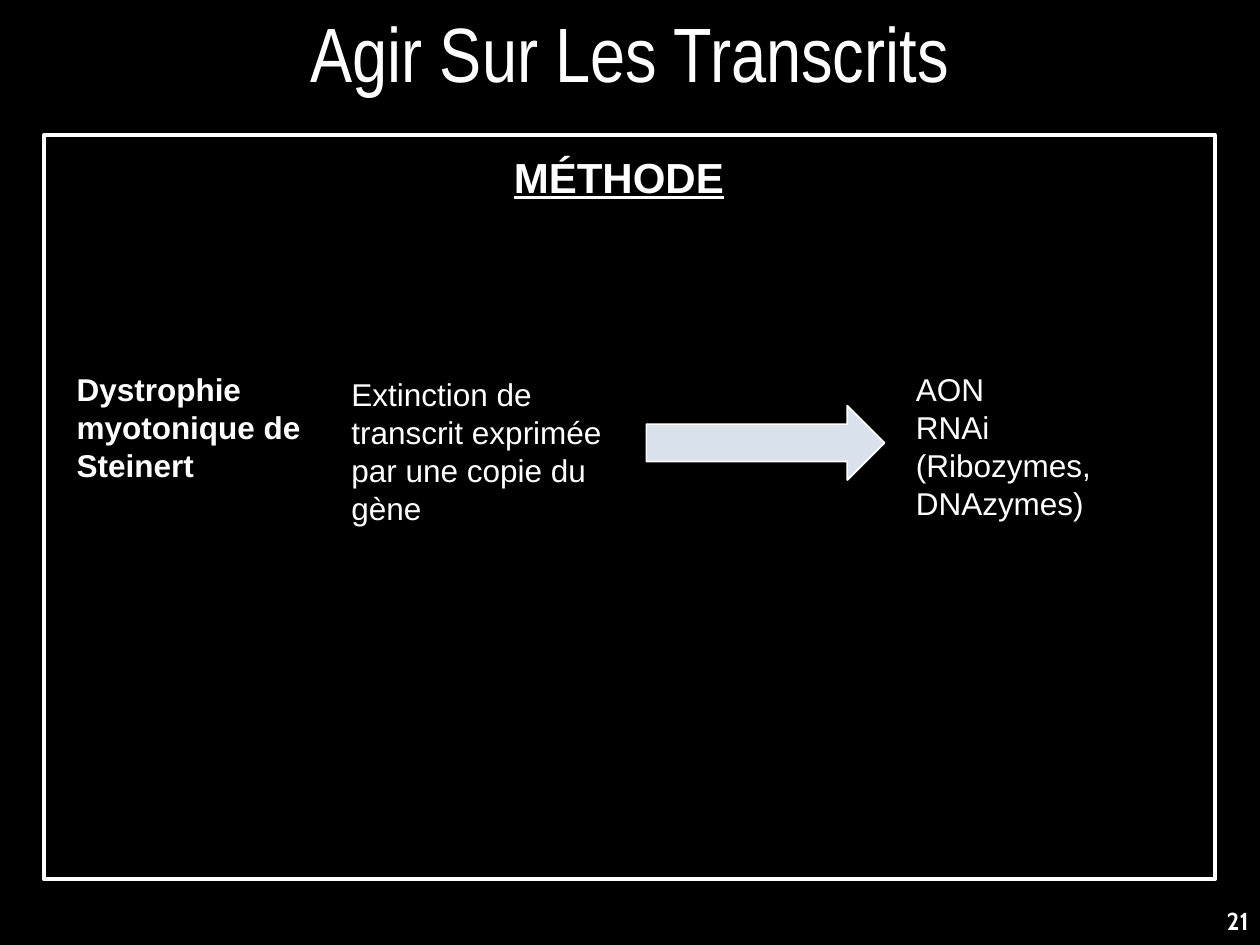
from dataclasses import dataclass

from pptx import Presentation
from pptx.dml.color import RGBColor
from pptx.enum.shapes import MSO_SHAPE as Preset
from pptx.enum.text import MSO_ANCHOR as Anchor, MSO_AUTO_SIZE as AutoSize, PP_ALIGN as Align
from pptx.util import Inches, Pt

WIDTH, HEIGHT = Inches(10), Inches(7.5)
WHITE, BLACK, PALE_BLUE = "FFFFFF", "000000", "D8E1EC"


@dataclass(frozen=True)
class Area:
    """Position and size in percent of the slide."""
    left: float
    top: float
    width: float
    height: float

    def lengths(self) -> tuple[int, int, int, int]:
        """Return the area as slide lengths."""
        return (int(WIDTH * self.left / 100), int(HEIGHT * self.top / 100),
                int(WIDTH * self.width / 100), int(HEIGHT * self.height / 100))


@dataclass(frozen=True)
class Label:
    """Text of one or more paragraphs sharing a style."""
    area: Area
    paragraphs: tuple[str, ...]
    size: int = 18
    font: str = "Arial"
    bold: bool = False
    underline: bool = False
    align: Align = Align.LEFT
    anchor: Anchor = Anchor.TOP


@dataclass(frozen=True)
class Outline:
    """Preset shape with a white line and an optional fill."""
    area: Area
    preset: Preset
    line_width: float
    fill: str | None = None


TITLE = Label(Area(0, -1.2, 100, 13.33), ("Agir Sur Les Transcrits",), 44, "Arial Narrow",
              align=Align.CENTER, anchor=Anchor.MIDDLE)
LABELS = (
    Label(Area(76.8, 95.2, 23.3, 6.93), ("21",), 14, "Cabin", bold=True, align=Align.RIGHT),
    Label(Area(39.8, 15.33, 26, 6.67), ("MÉTHODE",), 24, bold=True, underline=True),
    Label(Area(5.1, 38.53, 21.2, 13.33), ("Dystrophie myotonique de Steinert",), bold=True),
    Label(Area(26.9, 39.07, 22.8, 17.33),
          ("Extinction de transcrit exprimée par une copie du gène",)),
    Label(Area(71.7, 38.53, 16.5, 17.33), ("AON", "RNAi (Ribozymes, DNAzymes)")),
)
OUTLINES = (
    Outline(Area(3.5, 14.27, 92.9, 78.8), Preset.RECTANGLE, 2.25),
    Outline(Area(51.3, 42.93, 18.9, 7.87), Preset.RIGHT_ARROW, 1, PALE_BLUE),
)


def paint(fill, colour: str) -> None:
    """Give a fill one solid colour."""
    fill.solid()
    fill.fore_color.rgb = RGBColor.from_string(colour)


def write_label(holder, label: Label) -> None:
    """Write and format a label in a shape that holds text."""
    frame = holder.text_frame
    frame.word_wrap = True
    frame.auto_size = AutoSize.NONE
    frame.vertical_anchor = label.anchor
    for index, words in enumerate(label.paragraphs):
        paragraph = frame.add_paragraph() if index else frame.paragraphs[0]
        paragraph.alignment = label.align
        run = paragraph.add_run()
        run.text = words
        run.font.name = label.font
        run.font.size = Pt(label.size)
        run.font.bold = label.bold
        run.font.underline = label.underline
        paint(run.font.fill, WHITE)


def draw_outline(slide, outline: Outline) -> None:
    """Draw a preset shape."""
    shape = slide.shapes.add_shape(outline.preset, *outline.area.lengths())
    shape.shadow.inherit = False
    if outline.fill:
        paint(shape.fill, outline.fill)
    else:
        shape.fill.background()
    paint(shape.line.fill, WHITE)
    shape.line.width = Pt(outline.line_width)


def main() -> None:
    """Build and save the slide."""
    deck = Presentation()
    deck.slide_width, deck.slide_height = WIDTH, HEIGHT
    slide = deck.slides.add_slide(deck.slide_layouts[5])
    paint(slide.background.fill, BLACK)

    title = slide.shapes.title
    title.left, title.top, title.width, title.height = TITLE.area.lengths()
    write_label(title, TITLE)
    for outline in OUTLINES:
        draw_outline(slide, outline)
    for label in LABELS:
        write_label(slide.shapes.add_textbox(*label.area.lengths()), label)
    deck.save("out.pptx")


if __name__ == "__main__":
    main()
